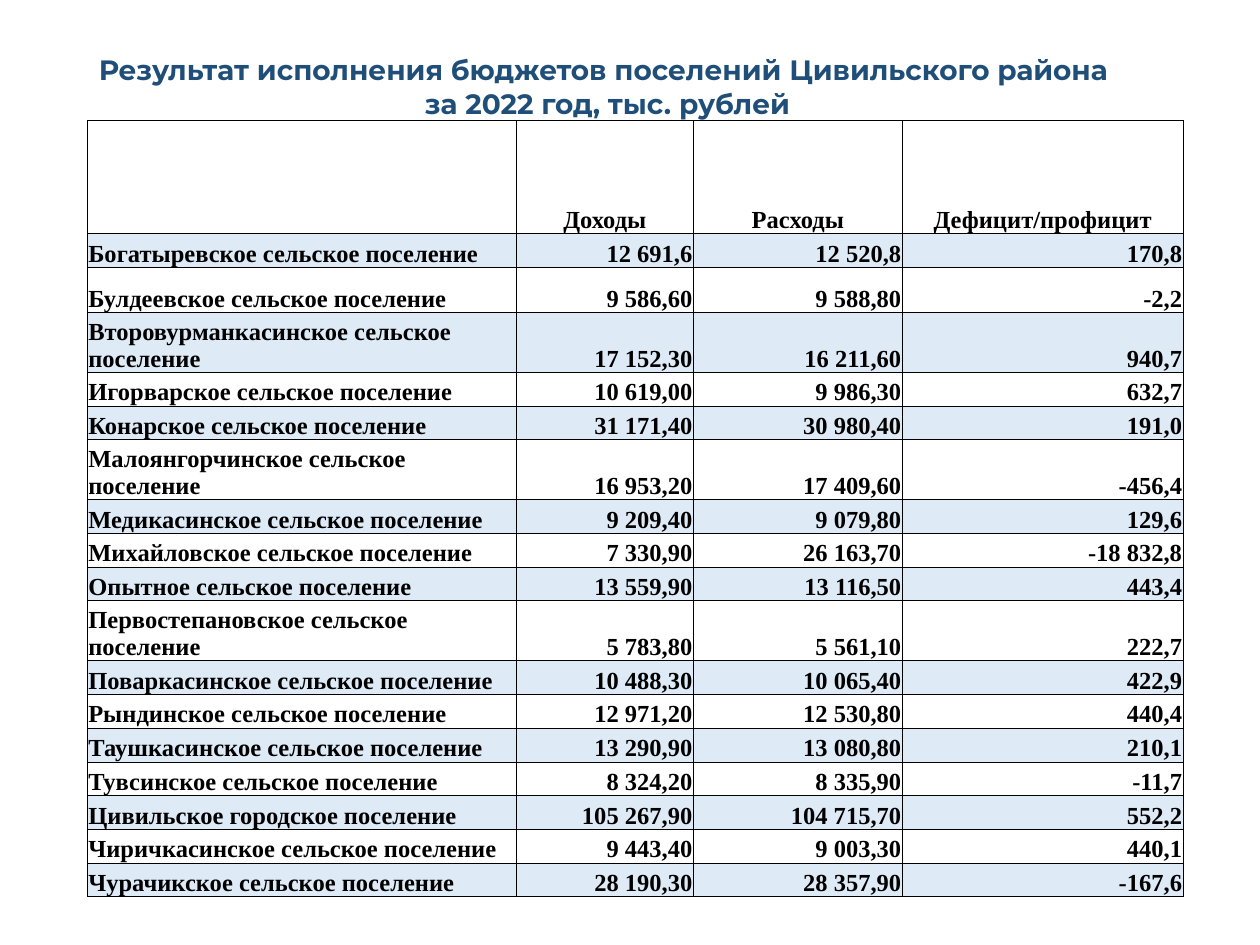
"""Build a slide with the 2022 budget results of the district's settlements."""
from lxml import etree
from pptx import Presentation
from pptx import util as u
from pptx.dml import color
from pptx.enum import text
from pptx.oxml import ns

TITLE = "Результат исполнения бюджетов поселений Цивильского района \vза 2022 год, тыс. рублей"
HEADER = ("", "Доходы", "Расходы", "Дефицит/профицит")
BUDGETS = [
    ("Богатыревское сельское поселение", "12 691,6", "12 520,8", "170,8"),
    ("Булдеевское сельское поселение", "9 586,60", "9 588,80", "-2,2"),
    ("Второвурманкасинское сельское поселение", "17 152,30", "16 211,60", "940,7"),
    ("Игорварское сельское поселение", "10 619,00", "9 986,30", "632,7"),
    ("Конарское сельское поселение", "31 171,40", "30 980,40", "191,0"),
    ("Малоянгорчинское сельское поселение", "16 953,20", "17 409,60", "-456,4"),
    ("Медикасинское сельское поселение", "9 209,40", "9 079,80", "129,6"),
    ("Михайловское сельское поселение", "7 330,90", "26 163,70", "-18 832,8"),
    ("Опытное сельское поселение", "13 559,90", "13 116,50", "443,4"),
    ("Первостепановское сельское поселение", "5 783,80", "5 561,10", "222,7"),
    ("Поваркасинское сельское поселение", "10 488,30", "10 065,40", "422,9"),
    ("Рындинское сельское поселение", "12 971,20", "12 530,80", "440,4"),
    ("Таушкасинское сельское поселение", "13 290,90", "13 080,80", "210,1"),
    ("Тувсинское сельское поселение", "8 324,20", "8 335,90", "-11,7"),
    ("Цивильское городское поселение", "105 267,90", "104 715,70", "552,2"),
    ("Чиричкасинское сельское поселение", "9 443,40", "9 003,30", "440,1"),
    ("Чурачикское сельское поселение", "28 190,30", "28 357,90", "-167,6"),
]
COLUMN_WIDTHS = (8.65, 3.57, 4.21, 5.66)
ROW_HEIGHT = 0.68
SPECIAL_HEIGHTS = {0: 2.28, 2: 0.91, 3: 1.2, 6: 1.2, 10: 1.2}
COLORS = {"title": "1F4E79", "text": "000000", "band": "DEEBF7", "border": "000000"}
TITLE_FONT = {"name": "Montserrat", "size": u.Pt(16), "bold": True}
CELL_FONT = {"name": "Times New Roman", "size": u.Pt(14), "bold": True}
TITLE_FRAME = {
    "word_wrap": True, "vertical_anchor": text.MSO_ANCHOR.BOTTOM,
    "margin_top": 0, "margin_bottom": 0,
}
CELL_FORMAT = {
    "vertical_anchor": text.MSO_ANCHOR.BOTTOM, "margin_left": u.Cm(0.02),
    "margin_right": u.Cm(0.02), "margin_top": u.Cm(0.02), "margin_bottom": 0,
}


def apply(target, values):
    for name, value in values.items():
        setattr(target, name, value)


def style_paragraph(paragraph, font, color_name, alignment):
    paragraph.alignment = alignment
    apply(paragraph.font, font)
    paragraph.font.color.rgb = color.RGBColor.from_string(COLORS[color_name])


def add_borders(cell):
    properties = cell._tc.get_or_add_tcPr()
    for position, side in enumerate(("lnL", "lnR", "lnT", "lnB")):
        line = etree.Element(ns.qn(f"a:{side}"), w=str(u.Pt(0.5)))
        fill = etree.SubElement(line, ns.qn("a:solidFill"))
        etree.SubElement(fill, ns.qn("a:srgbClr"), val=COLORS["border"])
        properties.insert(position, line)


def add_title(slide):
    box = slide.shapes.add_textbox(u.Cm(0.91), u.Cm(0.56), u.Cm(22.68), u.Cm(1.86))
    frame = box.text_frame
    apply(frame, TITLE_FRAME)
    paragraph = frame.paragraphs[0]
    paragraph.text = TITLE
    style_paragraph(paragraph, TITLE_FONT, "title", text.PP_ALIGN.CENTER)


def fill_cell(cell, value, row, column):
    apply(cell, CELL_FORMAT)
    if row % 2:
        cell.fill.solid()
        cell.fill.fore_color.rgb = color.RGBColor.from_string(COLORS["band"])
    else:
        cell.fill.background()
    add_borders(cell)
    if row == 0:
        alignment = text.PP_ALIGN.CENTER
    else:
        alignment = text.PP_ALIGN.RIGHT if column else text.PP_ALIGN.LEFT
    paragraph = cell.text_frame.paragraphs[0]
    paragraph.text = value
    style_paragraph(paragraph, CELL_FONT, "text", alignment)


def add_budget_table(slide):
    rows = [HEADER, *BUDGETS]
    heights = [SPECIAL_HEIGHTS.get(row, ROW_HEIGHT) for row in range(len(rows))]
    table = slide.shapes.add_table(
        len(rows), len(HEADER), u.Cm(1.76), u.Cm(2.43),
        u.Cm(sum(COLUMN_WIDTHS)), u.Cm(sum(heights)),
    ).table
    apply(table, {"first_row": False, "horz_banding": False})
    for column, width in zip(table.columns, COLUMN_WIDTHS):
        column.width = u.Cm(width)
    for row, (values, height) in enumerate(zip(rows, heights)):
        table.rows[row].height = u.Cm(height)
        for column, value in enumerate(values):
            fill_cell(table.cell(row, column), value, row, column)


def main():
    presentation = Presentation()
    apply(presentation, {"slide_width": u.Cm(25.4), "slide_height": u.Cm(19.05)})
    slide = presentation.slides.add_slide(presentation.slide_layouts[6])
    add_title(slide)
    add_budget_table(slide)
    presentation.save("out.pptx")


if __name__ == "__main__":
    main()
